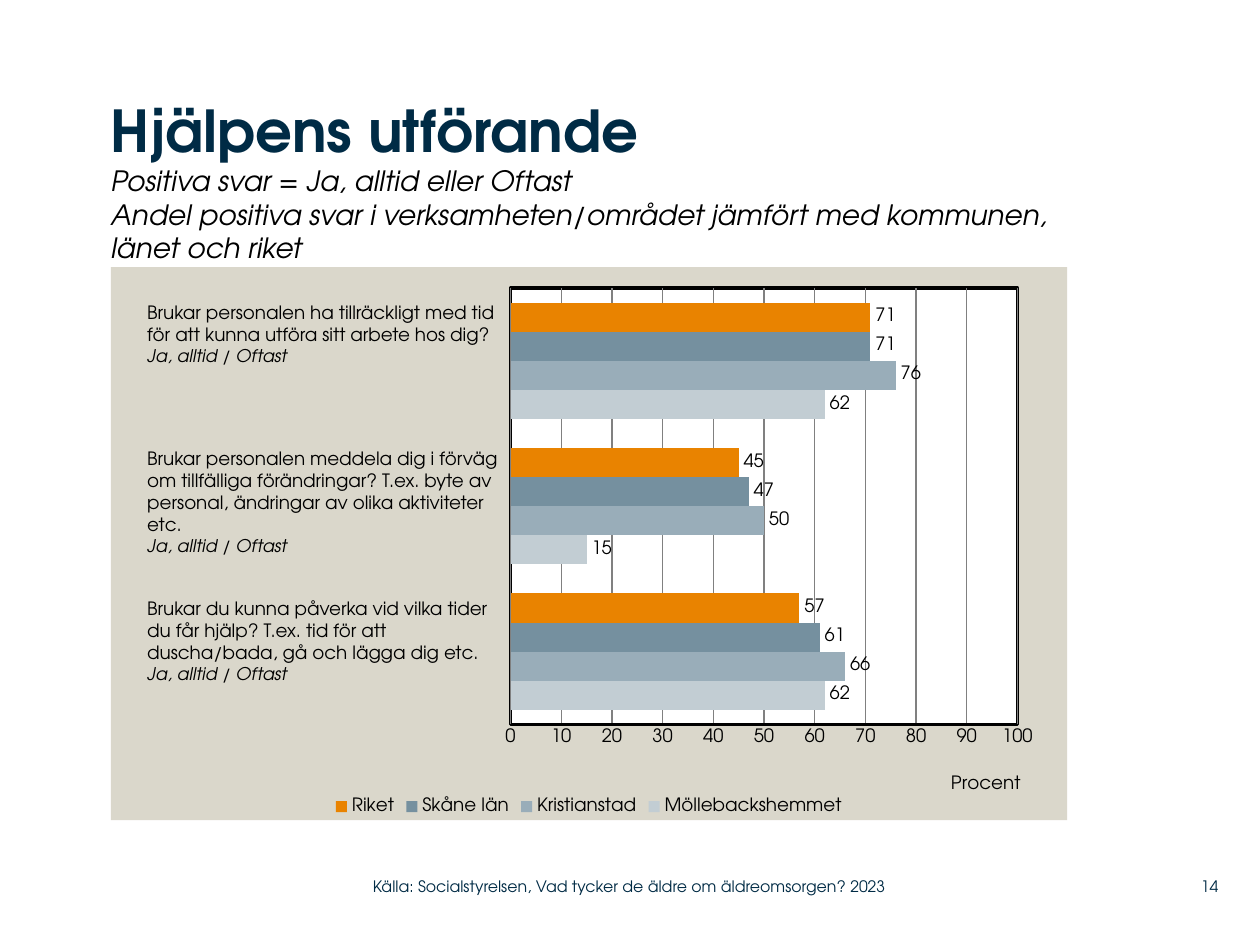
import pptx
import pptx.util
import pptx.chart.data
import pptx.dml.color
import pptx.enum.chart
import pptx.enum.text
import pptx.oxml
import pptx.oxml.ns

Inches, Pt = pptx.util.Inches, pptx.util.Pt
RGBColor = pptx.dml.color.RGBColor
NAVY = RGBColor(0x00, 0x2B, 0x45)
BLACK = RGBColor(0x00, 0x00, 0x00)
GRAY = RGBColor(0x80, 0x80, 0x80)
BEIGE = RGBColor(0xDA, 0xD7, 0xCB)
FONT = "TeX Gyre Adventor"
SERIES = [
    ("Möllebackshemmet", (62, 15, 62), RGBColor(0xC2, 0xCD, 0xD3)),
    ("Kristianstad", (66, 50, 76), RGBColor(0x99, 0xAD, 0xB9)),
    ("Skåne län", (61, 47, 71), RGBColor(0x75, 0x90, 0x9F)),
    ("Riket", (57, 45, 71), RGBColor(0xE9, 0x83, 0x00)),
]
QUESTIONS = [
    (2.34, 0.81, ["Brukar personalen ha tillräckligt med tid",
                  "för att kunna utföra sitt arbete hos dig?"]),
    (3.5, 0.98, ["Brukar personalen meddela dig i förväg om tillfälliga förändringar? "
                 "T.ex. byte av personal, ändringar av olika aktiviteter etc."]),
    (4.69, 0.81, ["Brukar du kunna påverka vid vilka tider",
                  "du får hjälp? T.ex. tid för att",
                  "duscha/bada, gå och lägga dig etc."]),
]


def style_font(font, size, color=BLACK, bold=False, italic=False):
    """Apply the slide font with the given size, colour and style."""
    font.name, font.size, font.bold, font.italic = FONT, Pt(size), bold, italic
    font.color.rgb = color


def fill_shape(fmt, color):
    """Give a fill-bearing format a solid colour."""
    fmt.fill.solid()
    fmt.fill.fore_color.rgb = color


def set_margins(tf, margin=0):
    """Set all four insets of a text frame and let it wrap."""
    tf.margin_left = tf.margin_right = tf.margin_top = tf.margin_bottom = margin
    tf.word_wrap = True


def add_title(slide, left, top, width, height):
    """Place the heading and its explanatory lines in the title placeholder."""
    sp = slide.shapes.title
    sp.left, sp.top, sp.width, sp.height = left, top, width, height
    tf = sp.text_frame
    set_margins(tf)
    tf.auto_size = pptx.enum.text.MSO_AUTO_SIZE.NONE
    tf.vertical_anchor = pptx.enum.text.MSO_ANCHOR.TOP
    tf.text = ("Hjälpens utförande\nPositiva svar = Ja, alltid eller Oftast\n"
               "Andel positiva svar i verksamheten/området jämfört med kommunen, länet och riket")
    for i, p in enumerate(tf.paragraphs):
        p.alignment = pptx.enum.text.PP_ALIGN.LEFT
        for r in p.runs:
            if i == 0:
                style_font(r.font, 33, NAVY, bold=True)
            else:
                style_font(r.font, 16, italic=True)


def manual_layout(x, y, w=None, h=None):
    """Return a chart layout element with positions as fractions of the chart."""
    parts = [("xMode", "edge"), ("yMode", "edge"), ("x", x), ("y", y)]
    if w is not None:
        parts = [("layoutTarget", "inner")] + parts + [("w", w), ("h", h)]
    inner = "".join(f'<c:{tag} val="{val}"/>' for tag, val in parts)
    return pptx.oxml.parse_xml(
        f'<c:layout {pptx.oxml.ns.nsdecls("c")}><c:manualLayout>{inner}'
        "</c:manualLayout></c:layout>")


def set_layout(parent, layout, index):
    """Replace the layout of a chart part."""
    for old in parent.findall(pptx.oxml.ns.qn("c:layout")):
        parent.remove(old)
    parent.insert(index, layout)


def style_areas(chart):
    """Colour the chart background and frame the plot area."""
    area = (f'<c:spPr {pptx.oxml.ns.nsdecls("c", "a")}><a:solidFill>'
            '<a:srgbClr val="{}"/></a:solidFill>{}</c:spPr>')
    frame = '<a:ln w="25400"><a:solidFill><a:srgbClr val="000000"/></a:solidFill></a:ln>'
    space = chart._chartSpace
    space.chart.addnext(pptx.oxml.parse_xml(area.format(BEIGE, "<a:ln><a:noFill/></a:ln>")))
    plot_area = space.chart.plotArea
    plot_area.append(pptx.oxml.parse_xml(area.format("FFFFFF", frame)))
    set_layout(plot_area, manual_layout(0.418, 0.038, 0.53, 0.789), 0)


def style_value_axis(axis):
    """Format the percent axis with its gridlines and title."""
    axis.minimum_scale, axis.maximum_scale, axis.major_unit = 0, 100, 10
    axis.major_tick_mark = axis.minor_tick_mark = pptx.enum.chart.XL_TICK_MARK.NONE
    axis.format.line.color.rgb = BLACK
    axis.format.line.width = Pt(2)
    axis.major_gridlines.format.line.color.rgb = GRAY
    axis.major_gridlines.format.line.width = Pt(0.75)
    style_font(axis.tick_labels.font, 10.5)
    tf = axis.axis_title.text_frame
    tf.text = "Procent"
    style_font(tf.paragraphs[0].runs[0].font, 10.5)
    set_layout(axis.axis_title._element, manual_layout(0.875, 0.91), 1)


def add_answer_chart(slide, left, top, width, height):
    """Add the bar chart of positive answers."""
    data = pptx.chart.data.CategoryChartData()
    data.categories = ["1", "2", "3"]
    for name, values, _ in SERIES:
        data.add_series(name, values)
    chart = slide.shapes.add_chart(
        pptx.enum.chart.XL_CHART_TYPE.BAR_CLUSTERED, left, top, width, height, data).chart
    style_font(chart.font, 10.5)
    chart.has_title = False
    chart.has_legend = True
    chart.legend.position = pptx.enum.chart.XL_LEGEND_POSITION.BOTTOM
    chart.legend.include_in_layout = False
    style_font(chart.legend.font, 10.5)
    chart.category_axis.visible = False
    style_value_axis(chart.value_axis)
    plot = chart.plots[0]
    plot.gap_width, plot.overlap, plot.vary_by_categories = 100, 0, False
    for s, (_, _, color) in zip(plot.series, SERIES):
        fill_shape(s.format, color)
        s.data_labels.show_value = True
        s.data_labels.position = pptx.enum.chart.XL_LABEL_POSITION.OUTSIDE_END
        style_font(s.data_labels.font, 10.5)
    style_areas(chart)


def add_question(slide, left, top, width, height, lines):
    """Add one question with its answer options in italics below."""
    tf = slide.shapes.add_textbox(left, top, width, height).text_frame
    tf.word_wrap = True
    tf.text = "\n".join(lines + ["Ja, alltid / Oftast"])
    for p in tf.paragraphs:
        style_font(p.runs[0].font, 10.5)
    style_font(tf.paragraphs[-1].runs[0].font, 10, italic=True)


def add_footer_text(slide, left, top, width, height, text, align):
    """Add one footer text."""
    tf = slide.shapes.add_textbox(left, top, width, height).text_frame
    set_margins(tf)
    tf.vertical_anchor = pptx.enum.text.MSO_ANCHOR.MIDDLE
    tf.text = text
    tf.paragraphs[0].alignment = align
    style_font(tf.paragraphs[0].runs[0].font, 9, NAVY)


def main():
    """Build and save the slide."""
    prs = pptx.Presentation()
    prs.slide_width, prs.slide_height = Inches(10), Inches(7.5)
    slide = prs.slides.add_slide(prs.slide_layouts[5])
    add_answer_chart(slide, Inches(0.88), Inches(2.12), Inches(7.59), Inches(4.39))
    add_title(slide, Inches(0.88), Inches(0.75), Inches(7.79), Inches(1.21))
    for top, height, lines in QUESTIONS:
        add_question(slide, Inches(1.07), Inches(top), Inches(2.99), Inches(height), lines)
    align = pptx.enum.text.PP_ALIGN
    add_footer_text(slide, Inches(9.2), Inches(6.89), Inches(0.47), Inches(0.29),
                    "14", align.RIGHT)
    add_footer_text(slide, Inches(2.96), Inches(6.89), Inches(4.43), Inches(0.29),
                    "Källa: Socialstyrelsen, Vad tycker de äldre om äldreomsorgen? 2023",
                    align.LEFT)
    prs.save("out.pptx")


if __name__ == "__main__":
    main()
